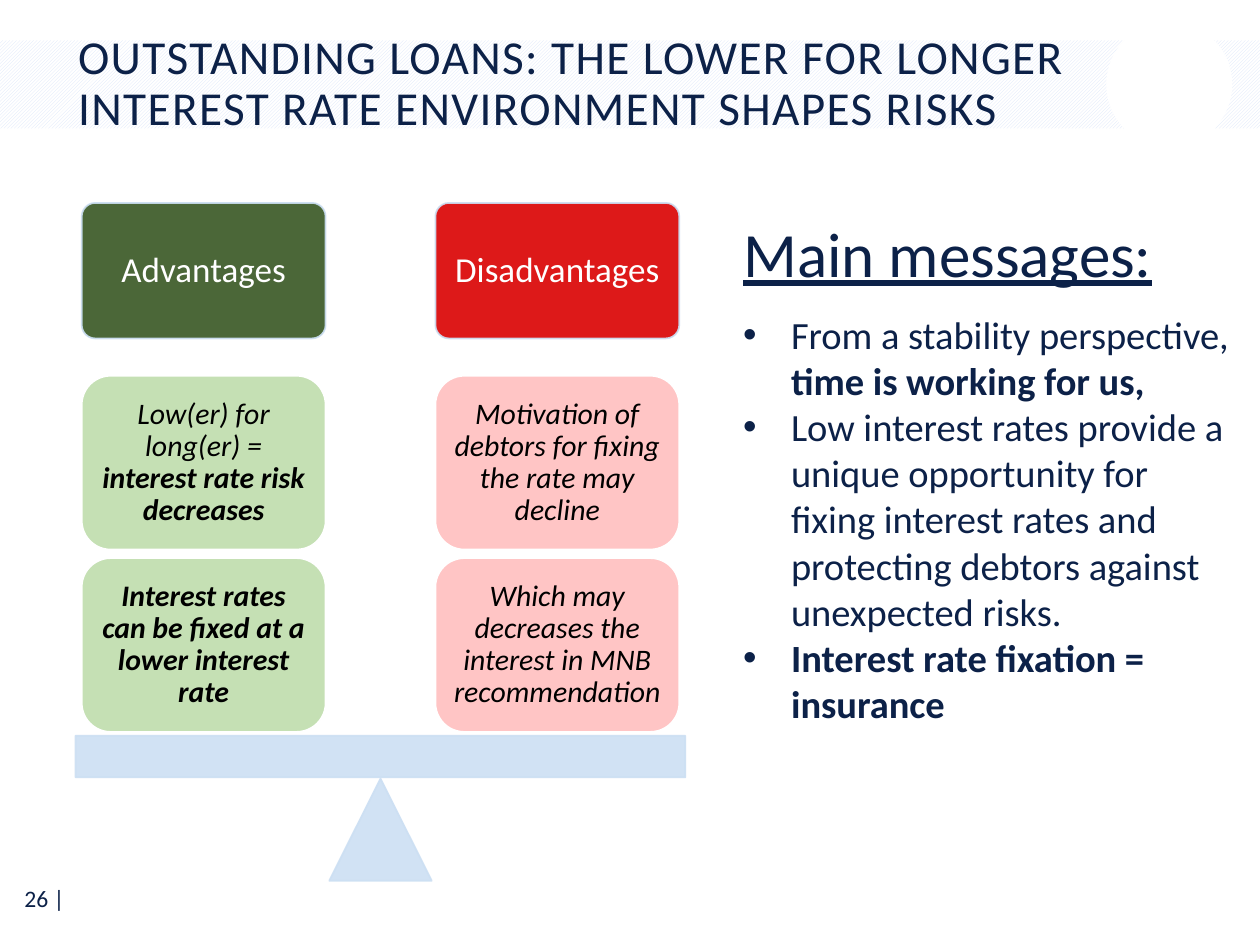
import collections

import pptx
import pptx.dml.color
import pptx.enum.dml
import pptx.enum.shapes
import pptx.enum.text
import pptx.oxml.ns
import pptx.util
from lxml import etree

FONT = "Calibri"
NAVY, WHITE, BLACK, PALE_BLUE = "0C2148", "FFFFFF", "000000", "CCDFF3"
SHAPE = pptx.enum.shapes.MSO_SHAPE
ALIGN = pptx.enum.text.PP_ALIGN
MIDDLE = pptx.enum.text.MSO_ANCHOR.MIDDLE
Box = collections.namedtuple("Box", "left top width height")
Side = collections.namedtuple("Side", "heading dark light cards")

SIDES = [
    Side("Advantages", "385723", "C5E0B4", [
        [("Low(er) for long(er) = ", "i"), ("interest rate risk decreases", "bi")],
        [("Interest rates can be fixed at a lower interest rate", "bi")],
    ]),
    Side("Disadvantages", "DA0000", "FFC5C5", [
        [("Motivation of debtors for fixing the rate may decline", "i")],
        [("Which may decreases the interest in MNB recommendation", "i")],
    ]),
]
MESSAGES = [
    [("From a stability perspective,", ""), (" time is working for us,", "b")],
    [("Low interest rates provide a unique opportunity for fixing interest rates "
      "and protecting debtors against unexpected risks.", "")],
    [("Interest rate fixation = insurance", "b")],
]


def inner(box, left, top, width, height):
    """Return a box given in percent of an outer one."""
    return Box(int(box.left + box.width * left / 100),
               int(box.top + box.height * top / 100),
               int(box.width * width / 100),
               int(box.height * height / 100))


def colour(value):
    """Turn a hex string into a colour."""
    return pptx.dml.color.RGBColor.from_string(value)


def add_shape(page, kind, box, fill, line=None, opacity=100):
    """Add a flat preset shape, with an outline if a line colour is given."""
    shape = page.shapes.add_shape(kind, *box)
    shape.shadow.inherit = False
    shape.fill.solid()
    shape.fill.fore_color.rgb = colour(fill)
    if line:
        shape.line.color.rgb = colour(line)
        shape.line.width = pptx.util.Pt(1)
    else:
        shape.line.fill.background()
    if opacity < 100:
        for tone in shape.element.spPr.iter(pptx.oxml.ns.qn("a:srgbClr")):
            etree.SubElement(tone, pptx.oxml.ns.qn("a:alpha"), val=str(opacity * 1000))
    return shape


def add_spans(para, spans, size, tone):
    """Add runs to a paragraph; the letters b, i and u mark their style."""
    for text, style in spans:
        span = para.add_run()
        span.text = text
        span.font.name = FONT
        span.font.size = pptx.util.Pt(size)
        span.font.color.rgb = colour(tone)
        span.font.bold = "b" in style
        span.font.italic = "i" in style
        span.font.underline = "u" in style


def add_bullet(para, indent):
    """Give a paragraph a bullet with a hanging indent."""
    properties = para._p.get_or_add_pPr()
    properties.set("marL", str(indent))
    properties.set("indent", str(-indent))
    etree.SubElement(properties, pptx.oxml.ns.qn("a:buFont"), typeface="Arial")
    etree.SubElement(properties, pptx.oxml.ns.qn("a:buChar"), char="•")


def add_band(page, box):
    """Draw the hatched band with its round gap."""
    band = add_shape(page, SHAPE.RECTANGLE, box, WHITE)
    band.fill.patterned()
    band.fill.pattern = pptx.enum.dml.MSO_PATTERN.LIGHT_UPWARD_DIAGONAL
    band.fill.fore_color.rgb = colour("DAE5F9")
    band.fill.back_color.rgb = colour(WHITE)
    add_shape(page, SHAPE.OVAL, inner(box, 87.8, -21.43, 10, 142.86), WHITE)


def place_title(page, box, text):
    """Move the title placeholder to its box, in front of the band, and fill it."""
    title = page.shapes.title
    title.element.getparent().append(title.element)
    title.left, title.top, title.width, title.height = box
    frame = title.text_frame
    frame.word_wrap = True
    frame.auto_size = pptx.enum.text.MSO_AUTO_SIZE.NONE
    frame.vertical_anchor = MIDDLE
    para = frame.paragraphs[0]
    para.alignment = ALIGN.LEFT
    para.line_spacing = 0.9
    add_spans(para, [(text, "")], 27, NAVY)
    para.runs[0].font._element.set("spc", "80")


def add_card(page, box, spans, size, tone, fill, line, inset, opacity=100):
    """Add a rounded card with centred text."""
    card = add_shape(page, SHAPE.ROUNDED_RECTANGLE, box, fill, line, opacity)
    frame = card.text_frame
    frame.word_wrap = True
    frame.vertical_anchor = MIDDLE
    frame.margin_left = frame.margin_right = pptx.util.Inches(inset)
    frame.margin_top = frame.margin_bottom = pptx.util.Inches(inset)
    para = frame.paragraphs[0]
    para.alignment = ALIGN.CENTER
    para.line_spacing = 0.9
    add_spans(para, spans, size, tone)
    return card


def add_scale(page, box, sides):
    """Draw the balance with one column of cards for each side."""
    add_shape(page, SHAPE.ISOSCELES_TRIANGLE, inner(box, 41.6, 84.94, 16.8, 15.06),
              PALE_BLUE, PALE_BLUE, 90)
    add_shape(page, SHAPE.RECTANGLE, inner(box, 0, 78.62, 100, 6.13),
              PALE_BLUE, PALE_BLUE, 90)
    for column, side in enumerate(sides):
        left = 1 + 58 * column
        heading = add_card(page, inner(box, left, 0, 40, 20), [(side.heading, "")],
                           20, WHITE, side.dark, PALE_BLUE, 0.08, 90)
        heading.adjustments[0] = 0.1
        for row, spans in enumerate(side.cards):
            add_card(page, inner(box, left, 25.5 + 26.9 * row, 40, 25.65), spans,
                     17, BLACK, side.light, WHITE, 0.07)


def add_messages(page, box, heading, messages):
    """Add the underlined heading and its bulleted messages."""
    frame = page.shapes.add_textbox(*box).text_frame
    frame.word_wrap = True
    para = frame.paragraphs[0]
    para.space_after = pptx.util.Pt(12)
    add_spans(para, [(heading, "u")], 36, NAVY)
    for spans in messages:
        para = frame.add_paragraph()
        add_bullet(para, pptx.util.Inches(0.38))
        add_spans(para, spans, 22, NAVY)


def add_page_number(page, box, text):
    """Add the page number in the bottom corner."""
    frame = page.shapes.add_textbox(*box).text_frame
    frame.word_wrap = True
    frame.vertical_anchor = MIDDLE
    para = frame.paragraphs[0]
    para.alignment = ALIGN.RIGHT
    add_spans(para, [(text, "")], 13.5, NAVY)


def main():
    """Build the slide and save the deck."""
    deck = pptx.Presentation()
    deck.slide_width = pptx.util.Inches(10)
    deck.slide_height = pptx.util.Inches(7.5)
    page = deck.slides.add_slide(deck.slide_layouts.get_by_name("Title Only"))
    whole = Box(0, 0, deck.slide_width, deck.slide_height)
    add_page_number(page, inner(whole, 0.1, 92.53, 6, 4.93), "26 |")
    add_band(page, inner(whole, 0, 4.27, 100, 9.33))
    place_title(page, inner(whole, 5.2, 4.53, 83.2, 8.93),
                "OUTSTANDING LOANS: THE LOWER FOR LONGER "
                "INTEREST RATE ENVIRONMENT SHAPES RISKS")
    add_scale(page, inner(whole, 6, 21.47, 48.4, 71.73), SIDES)
    add_messages(page, inner(whole, 58, 22, 41.1, 56.13), "Main messages:", MESSAGES)
    deck.save("out.pptx")


if __name__ == "__main__":
    main()
